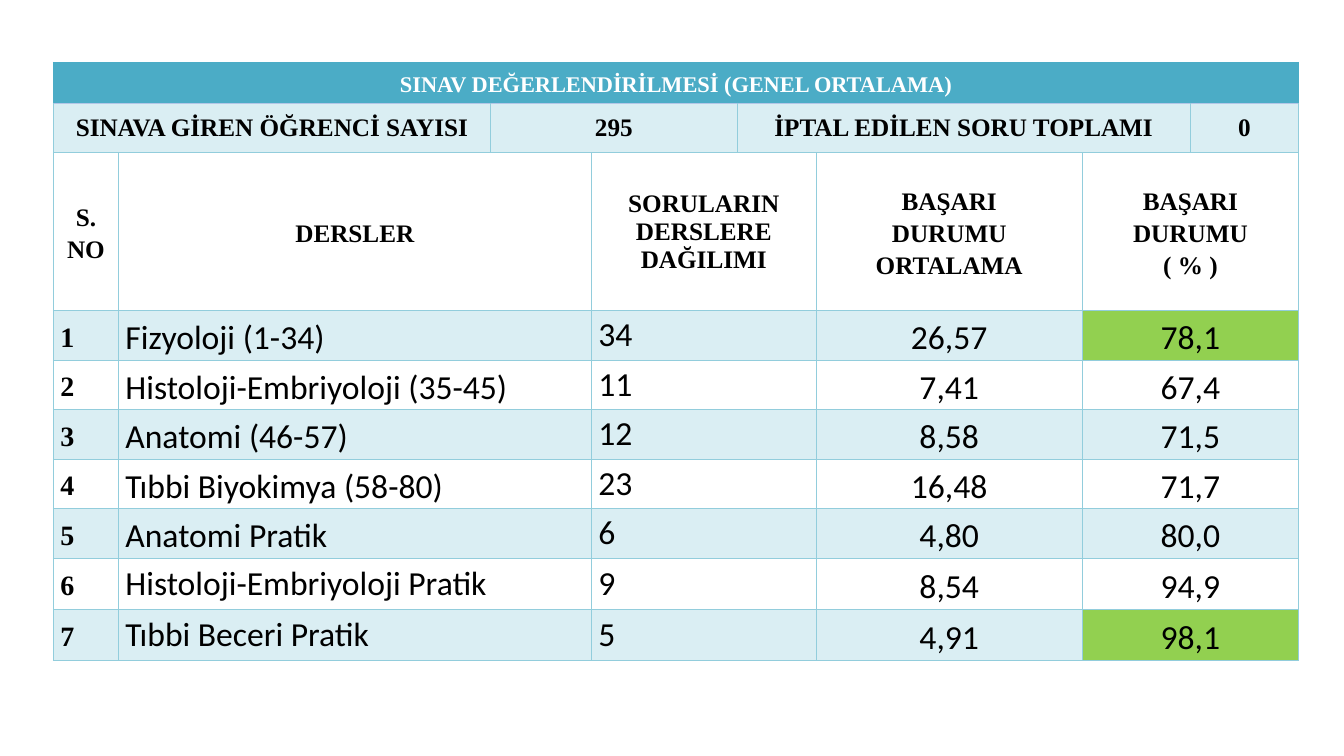
from lxml import etree
from pptx import Presentation
from pptx.dml.color import RGBColor
from pptx.enum.text import MSO_ANCHOR, PP_ALIGN
from pptx.oxml.ns import qn
from pptx.util import Pt

LEFT, CENTER = PP_ALIGN.LEFT, PP_ALIGN.CENTER
MIDDLE = MSO_ANCHOR.MIDDLE

BLACK = RGBColor(0x00, 0x00, 0x00)
WHITE = RGBColor(0xFF, 0xFF, 0xFF)
TEAL = RGBColor(0x4B, 0xAC, 0xC6)
PALE_TEAL = RGBColor(0xDA, 0xEE, 0xF3)
GRID_TEAL = RGBColor(0x92, 0xCD, 0xDC)
SOFT_BLUE = RGBColor(0xB4, 0xC7, 0xE7)
GREEN = RGBColor(0x92, 0xD0, 0x50)

TITLE_FONT = {"name": "Times New Roman", "size": Pt(16), "bold": True}
HEADING_FONT = {"name": "Times New Roman", "size": Pt(18), "bold": True}
NUMBER_FONT = {"name": "Times New Roman", "size": Pt(20), "bold": True}
BODY_FONT = {"name": "Calibri", "size": Pt(24), "bold": False}

PLAIN = {"line_spacing": 1.0, "space_after": Pt(0)}
LOOSE = {"line_spacing": 1.15, "space_after": Pt(10)}
CELL_FORMAT = {
    "vertical_anchor": MIDDLE,
    "margin_left": Pt(5), "margin_right": Pt(5),
    "margin_top": Pt(0), "margin_bottom": Pt(0),
}

COLUMN_WIDTHS = [46.4, 265.7, 72.1, 104.3, 56.4, 190, 77.1, 77.5]
ROW_HEIGHTS = [29, 35.4, 112.8] + [35.4] * 5 + [36.4] * 2
BODY_SPANS = [(0, 0), (1, 2), (3, 4), (5, 5), (6, 7)]

TITLE = "SINAV DEĞERLENDİRİLMESİ (GENEL ORTALAMA)"
SUMMARY = [
    ("SINAVA GİREN ÖĞRENCİ SAYISI", (0, 1)),
    ("295", (2, 3)),
    ("İPTAL EDİLEN SORU TOPLAMI", (4, 6)),
    ("0", (7, 7)),
]
HEADINGS = [
    ("S.\nNO", LOOSE),
    ("DERSLER", LOOSE),
    ("SORULARIN\nDERSLERE\nDAĞILIMI", PLAIN),
    ("BAŞARI\nDURUMU\nORTALAMA", LOOSE),
    ("BAŞARI\nDURUMU\n( % )", LOOSE),
]
COURSES = [
    ("Fizyoloji (1-34)", "34", "26,57", "78,1"),
    ("Histoloji-Embriyoloji (35-45)", "11", "7,41", "67,4"),
    ("Anatomi (46-57)", "12", "8,58", "71,5"),
    ("Tıbbi Biyokimya (58-80)", "23", "16,48", "71,7"),
    ("Anatomi Pratik", "6", "4,80", "80,0"),
    ("Histoloji-Embriyoloji Pratik", "9", "8,54", "94,9"),
    ("Tıbbi Beceri Pratik", "5", "4,91", "98,1"),
]
PLAIN_COURSES = (6, 7)
HIGHLIGHTED = ("78,1", "98,1")


def apply_format(target, values):
    for name, value in values.items():
        setattr(target, name, value)


def set_borders(cell, edges):
    properties = cell._tc.get_or_add_tcPr()
    for index, side in enumerate("LRTB"):
        line = etree.Element(qn(f"a:ln{side}"), w=str(Pt(1)))
        fill = etree.SubElement(line, qn("a:solidFill"))
        color = edges.get(side, GRID_TEAL)
        etree.SubElement(fill, qn("a:srgbClr"), val=str(color))
        properties.insert(index, line)


def fill_cell(table, row, columns, text, font, spacing,
              align=CENTER, fill=None, color=BLACK, edges=None):
    first, last = columns
    cell = table.cell(row, first)
    if last > first:
        cell.merge(table.cell(row, last))
    for column in range(first, last + 1):
        part = table.cell(row, column)
        if fill is None:
            part.fill.background()
        else:
            part.fill.solid()
            part.fill.fore_color.rgb = fill
        set_borders(part, edges or {})
    apply_format(cell, CELL_FORMAT)
    para = cell.text_frame.paragraphs[0]
    para.text = text
    apply_format(para, {"alignment": align, **spacing})
    for span in para.runs:
        apply_format(span.font, font)
        span.font.color.rgb = color


def add_header(table):
    title_edges = {"L": TEAL, "R": TEAL, "T": TEAL, "B": SOFT_BLUE}
    fill_cell(table, 0, (0, 7), TITLE, TITLE_FONT, LOOSE,
              fill=TEAL, color=WHITE, edges=title_edges)
    for text, columns in SUMMARY:
        fill_cell(table, 1, columns, text, HEADING_FONT, PLAIN,
                  fill=PALE_TEAL, edges={"T": SOFT_BLUE})
    for (text, spacing), columns in zip(HEADINGS, BODY_SPANS):
        fill_cell(table, 2, columns, text, HEADING_FONT, spacing)


def add_courses(table):
    for number, (course, questions, average, percent) in enumerate(COURSES, 1):
        band = PALE_TEAL if number % 2 else None
        mark = GREEN if percent in HIGHLIGHTED else band
        course_spacing = PLAIN if number in PLAIN_COURSES else LOOSE
        entries = [
            (str(number), NUMBER_FONT, LOOSE, LEFT, band),
            (course, BODY_FONT, course_spacing, LEFT, band),
            (questions, BODY_FONT, PLAIN, LEFT, band),
            (average, BODY_FONT, LOOSE, CENTER, band),
            (percent, BODY_FONT, LOOSE, CENTER, mark),
        ]
        for columns, entry in zip(BODY_SPANS, entries):
            fill_cell(table, number + 2, columns, *entry)


def add_results_table(page, left, top):
    frame = page.shapes.add_table(
        len(ROW_HEIGHTS), len(COLUMN_WIDTHS), Pt(left), Pt(top),
        Pt(sum(COLUMN_WIDTHS)), Pt(sum(ROW_HEIGHTS)))
    table = frame.table
    apply_format(table, {"first_row": False, "horz_banding": False})
    for column, width in zip(table.columns, COLUMN_WIDTHS):
        column.width = Pt(width)
    for row, height in zip(table.rows, ROW_HEIGHTS):
        row.height = Pt(height)
    add_header(table)
    add_courses(table)


def main():
    deck = Presentation()
    deck.slide_width, deck.slide_height = Pt(960), Pt(540)
    page = deck.slides.add_slide(deck.slide_layouts[6])
    add_results_table(page, 38.2, 44.7)
    deck.save("out.pptx")


if __name__ == "__main__":
    main()
